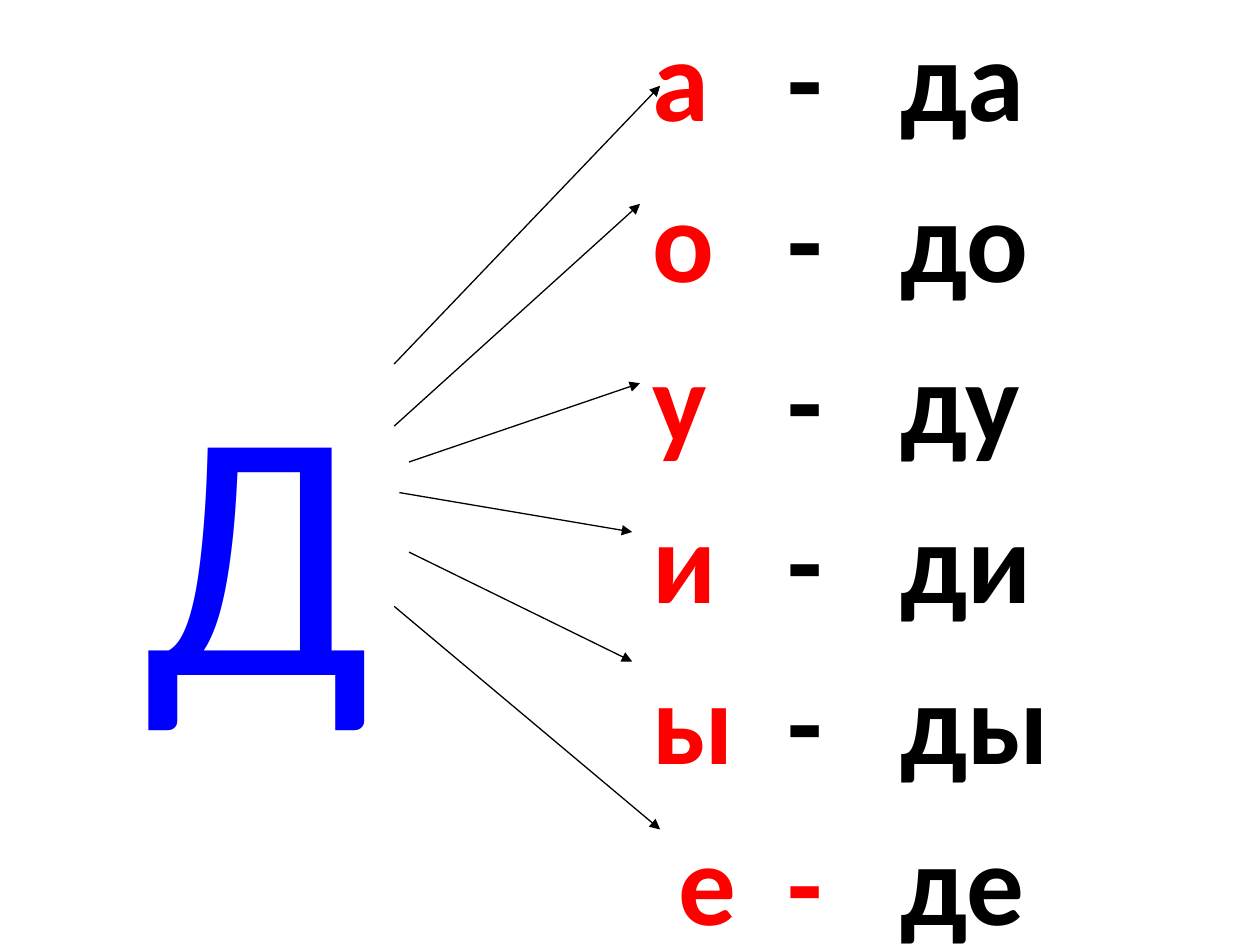
import pptx
import pptx.util
import pptx.dml.color
import pptx.enum.shapes
import pptx.oxml
import pptx.oxml.ns
from lxml import etree

Pt = pptx.util.Pt
COLORS = {"consonant": "0000FF", "vowel": "FF0000", "syllable": "000000", "arrow": "000000"}
FONT = "Calibri"
DASH_TAB, SYLLABLE_TAB = 77, 141.5
SYLLABLES = [
    ("а\t", "-\tда"),
    ("о\t", "-\tдо"),
    ("у\t", "-\tду"),
    ("и\t", "-\tди"),
    ("ы\t", "-\tды"),
    (" е\t-\t", "де"),
]
ARROWS = [
    (0, 194.5, 140.5, 67.5),
    (8.5, 215, 140.5, 170),
    (3, 232.5, 136, 255),
    (8.5, 266.5, 136, 329),
    (0, 297.5, 152, 425),
    (0, 159, 152, 0),
]


def rgb(role):
    """Return the colour of a role."""
    return pptx.dml.color.RGBColor.from_string(COLORS[role])


def add_text_frame(slide, left, top, width, height):
    """Add a wrapping text box and return its text frame."""
    frame = slide.shapes.add_textbox(Pt(left), Pt(top), Pt(width), Pt(height)).text_frame
    frame.word_wrap = True
    return frame


def add_consonant(slide, left, top, width, height):
    """Place the large consonant in its box."""
    letter = add_text_frame(slide, left, top, width, height).paragraphs[0]
    letter.text = "Д"
    letter.font.name = FONT
    letter.font.size = Pt(202.5)
    letter.font.color.rgb = rgb("consonant")


def set_tabs(paragraph, positions):
    """Give a paragraph left tab stops at the positions in points."""
    tabs = etree.SubElement(paragraph._p.get_or_add_pPr(), pptx.oxml.ns.qn("a:tabLst"))
    for position in positions:
        etree.SubElement(tabs, pptx.oxml.ns.qn("a:tab"), pos=str(int(Pt(position))), algn="l")


def add_syllables(slide, left, top, width, height):
    """Place one line per vowel with the syllable it forms."""
    frame = add_text_frame(slide, left, top, width, height)
    for index, parts in enumerate(SYLLABLES):
        line = frame.add_paragraph() if index else frame.paragraphs[0]
        set_tabs(line, (DASH_TAB, SYLLABLE_TAB))
        line.space_after = Pt(13.1)
        line.font.name = FONT
        line.font.size = Pt(65.7)
        line.font.bold = True
        for role, text in zip(("vowel", "syllable"), parts):
            run = line.add_run()
            run.text = text
            run.font.color.rgb = rgb(role)


def add_arrows(slide, left, top):
    """Fan the arrows out from the consonant to the vowels."""
    for x1, y1, x2, y2 in ARROWS:
        arrow = slide.shapes.add_connector(
            pptx.enum.shapes.MSO_CONNECTOR.STRAIGHT,
            Pt(left + x1), Pt(top + y1), Pt(left + x2), Pt(top + y2))
        arrow.line.color.rgb = rgb("arrow")
        arrow.line.width = Pt(0.75)
        etree.SubElement(arrow.line._get_or_add_ln(), pptx.oxml.ns.qn("a:tailEnd"), type="triangle")
        etree.SubElement(arrow._element.spPr, pptx.oxml.ns.qn("a:effectLst"))


def main():
    """Build and save the slide."""
    deck = pptx.Presentation()
    deck.slide_width, deck.slide_height = Pt(720), Pt(540)
    slide = deck.slides.add_slide(deck.slide_layouts[6])
    add_consonant(slide, 75, 180, 158, 331)
    add_syllables(slide, 366, 0, 335, 519)
    add_arrows(slide, 225.25, 49)
    deck.save("out.pptx")


if __name__ == "__main__":
    main()
